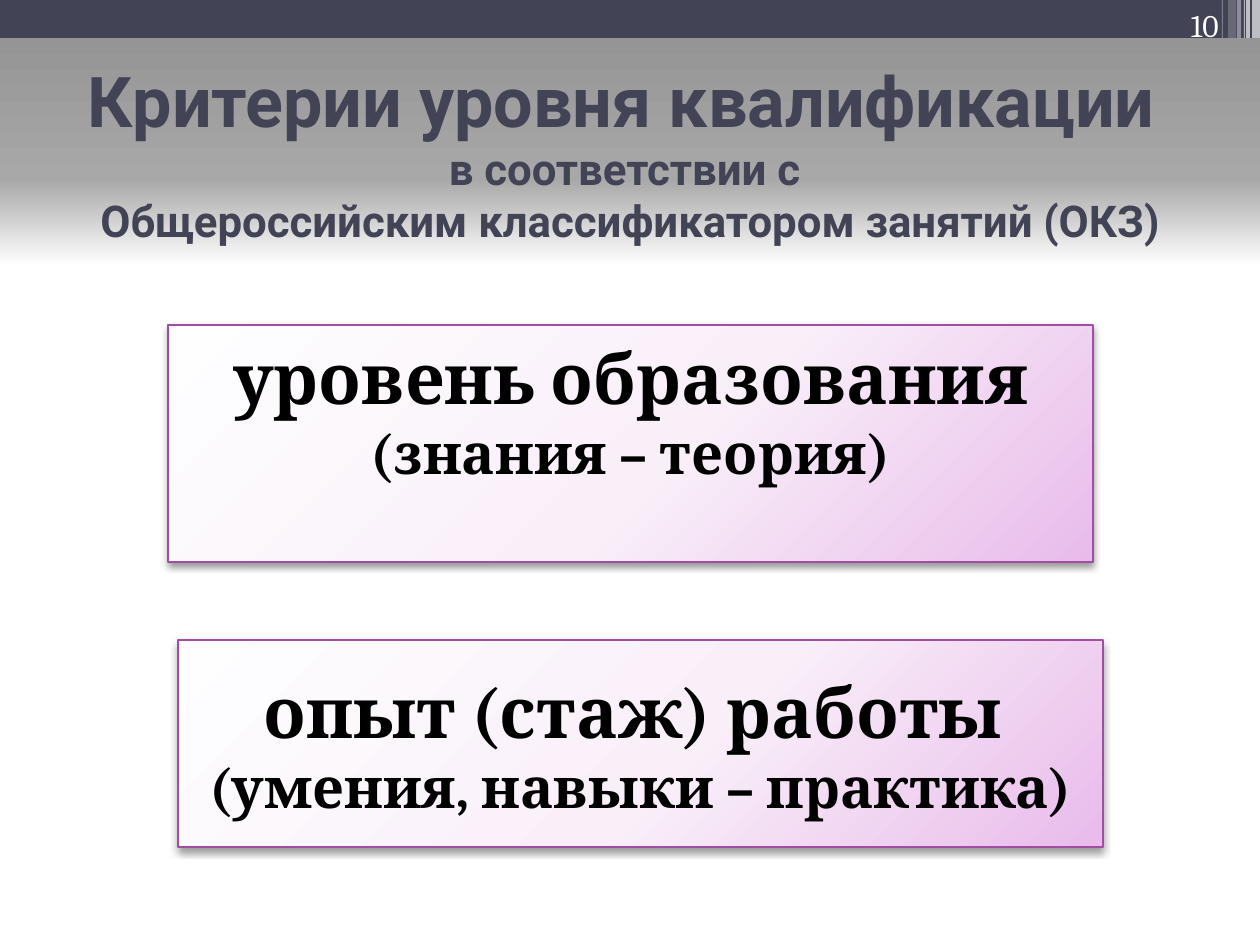
import copy

import pptx
import pptx.dml.color
import pptx.enum.shapes
import pptx.enum.text
import pptx.oxml
import pptx.oxml.ns
import pptx.util

RGB = pptx.dml.color.RGBColor.from_string
ALIGN = pptx.enum.text.PP_ALIGN
ANCHOR = pptx.enum.text.MSO_ANCHOR
RECT = pptx.enum.shapes.MSO_SHAPE.RECTANGLE
qn = pptx.oxml.ns.qn
NS = pptx.oxml.ns.nsdecls("a")

COLORS = {
    "slate": "424456",
    "white": "FFFFFF",
    "black": "000000",
    "border": "A04DA3",
}
BOX_STOPS = [(0, "FEFEFF"), (55, "F9EFF9"), (100, "E8BBEA")]
HEADER_STOPS = [(0, "959595"), (62, "A8A8A8"), (100, "FFFFFF")]
CORNER_GLOW = '<a:path path="circle"><a:fillToRect l="-40000" t="-90000" r="140000" b="190000"/></a:path>'
DOWNWARD = '<a:lin ang="5400000" scaled="0"/>'


def px(*lengths):
    return [pptx.util.Emu(round(n * 914400 / 126)) for n in lengths]


def fill_gradient(shape, stops, direction):
    gs = "".join(f'<a:gs pos="{at * 1000}"><a:srgbClr val="{color}"/></a:gs>' for at, color in stops)
    gradient = pptx.oxml.parse_xml(
        f'<a:gradFill {NS} rotWithShape="1"><a:gsLst>{gs}</a:gsLst>{direction}</a:gradFill>')
    shape.fill.background()
    properties = shape._element.spPr
    properties.replace(properties.find(qn("a:noFill")), gradient)


deck = pptx.Presentation()
deck.slide_width, deck.slide_height = px(1260, 945)
slide = deck.slides.add_slide(deck.slide_layouts[5])
shapes = slide.shapes

# Top bar and the translucent stripes at its right end: left, top, width, height, colour, opacity
bars = [(0, 0, 1260, 43, "slate", 100)]
bars += [(left, 0, width, height, "white", opacity) for left, width, height, opacity in [
    (1252, 8, 86, 65), (1246, 4, 86, 65), (1244, 1, 86, 60),
    (1237, 4, 86, 40), (1228, 8, 81, 20), (1222, 1, 81, 30)]]
for *place, color, opacity in bars:
    bar = shapes.add_shape(RECT, *px(*place))
    bar.shadow.inherit = False
    bar.line.fill.background()
    bar.fill.solid()
    bar.fill.fore_color.rgb = RGB(COLORS[color])
    if opacity < 100:
        tint = bar._element.spPr.find(qn("a:solidFill"))[0]
        tint.append(pptx.oxml.parse_xml(f'<a:alpha {NS} val="{opacity * 1000}"/>'))

# Title, brought in front of the bars
title = shapes.title
title.left, title.top, title.width, title.height = px(0, 38, 1260, 228)
fill_gradient(title, HEADER_STOPS, DOWNWARD)
title._element.getparent().append(title._element)
title.text_frame.auto_size = pptx.enum.text.MSO_AUTO_SIZE.NONE
title.text_frame.vertical_anchor = ANCHOR.MIDDLE
heading = title.text_frame.paragraphs[0]
heading.text = "Критерии уровня квалификации \vв соответствии с \vОбщероссийским классификатором занятий (ОКЗ)"
heading.alignment = ALIGN.CENTER
for run, size in zip(heading.runs, (40, 25, 25)):
    run.font.size = pptx.util.Pt(size)
    run.font.name = "Roboto"
    run.font.bold = True
    run.font.color.rgb = RGB(COLORS["slate"])
for line_break in heading._p.findall(qn("a:br")):
    line_break.append(copy.deepcopy(line_break.getprevious().find(qn("a:rPr"))))

# Criteria: place, bottom inset, paragraphs made of (text, size) runs
criteria = [
    ((168, 325, 925, 237), 72, [[("уровень образования ", 40), ("(знания – теория)", 32)]]),
    ((178, 640, 925, 207), 6, [[("опыт (стаж) работы ", 40)], [("(умения, навыки – практика)", 32)]]),
]
for place, bottom_inset, paragraphs in criteria:
    box = shapes.add_shape(RECT, *px(*place))
    fill_gradient(box, BOX_STOPS, CORNER_GLOW)
    box.line.color.rgb = RGB(COLORS["border"])
    box.line.width = pptx.util.Pt(0.75)
    box.shadow.inherit = False
    box._element.spPr.find(qn("a:effectLst")).append(pptx.oxml.parse_xml(
        f'<a:outerShdw {NS} blurRad="52070" dist="25400" dir="5400000" rotWithShape="0">'
        f'<a:srgbClr val="{COLORS["black"]}"><a:alpha val="40000"/></a:srgbClr></a:outerShdw>'))
    frame = box.text_frame
    frame.word_wrap = True
    frame.vertical_anchor = ANCHOR.MIDDLE
    frame.margin_bottom, = px(bottom_inset)
    for index, runs in enumerate(paragraphs):
        paragraph = frame.add_paragraph() if index else frame.paragraphs[0]
        paragraph.alignment = ALIGN.CENTER
        for text, size in runs:
            run = paragraph.add_run()
            run.text = text
            run.font.size = pptx.util.Pt(size)
            run.font.name = "Cambria"
            run.font.bold = True
            run.font.color.rgb = RGB(COLORS["black"])

page_number = shapes.add_textbox(*px(1126, 0, 105, 50)).text_frame
page_number.word_wrap = True
page_number.vertical_anchor = ANCHOR.BOTTOM
page_number.text = "10"
page_number.paragraphs[0].alignment = ALIGN.RIGHT
number_font = page_number.paragraphs[0].runs[0].font
number_font.size = pptx.util.Pt(18)
number_font.name = "Cambria"
number_font.color.rgb = RGB(COLORS["white"])

deck.save("out.pptx")
